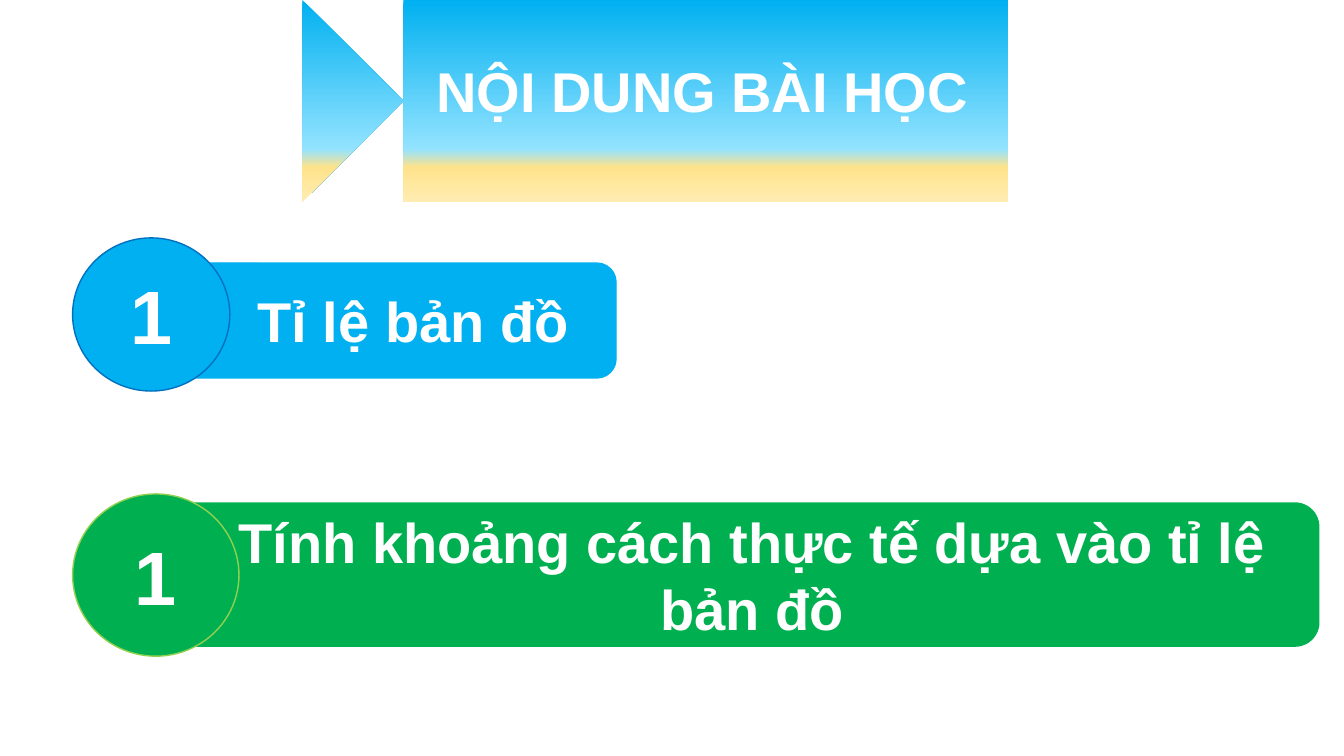
from dataclasses import dataclass

import pptx
import pptx.util
import pptx.dml.color
import pptx.enum.shapes
import pptx.enum.text
import pptx.oxml
import pptx.oxml.ns

Inches = pptx.util.Inches
MSO = pptx.enum.shapes.MSO_SHAPE
ALIGN = pptx.enum.text.PP_ALIGN
Box = tuple[float, float, float, float]


@dataclass
class Item:
    number: str
    text: str
    pill: Box
    circle: Box
    fill: str
    ring: str
    align: ALIGN
    indent: float


ITEMS = [
    Item("1", "Tỉ lệ bản đồ", (1.63, 2.61, 4.48, 1.14), (0.72, 2.36, 1.56, 1.52),
         "00B0F0", "0070C0", ALIGN.LEFT, 0.87),
    Item("1", "Tính khoảng cách thực tế dựa vào tỉ lệ bản đồ", (1.37, 4.99, 11.71, 1.42),
         (0.72, 4.9, 1.65, 1.61), "00B050", "92D050", ALIGN.CENTER, 0.56),
]

# Chevrons and the arrow of the title banner
BANNER = [
    [(3.16, 0.2), (3.44, 0.2), (3.72, 0.89), (3.44, 1.58), (3.16, 1.58), (3.44, 0.89)],
    [(3.63, 0.15), (3.89, 0.15), (3.89, 0.81), (3.9, 0.84), (3.89, 0.88), (3.89, 1.53),
     (3.63, 1.53), (3.89, 0.88), (3.89, 0.81)],
    [(3.9, 0.15), (9.67, 0.15), (10.17, 0.84), (9.67, 1.53), (3.9, 1.53), (4.18, 0.84)],
]
BANNER_STOPS = [(0, "00B0F0"), (74, "93E3FF"), (83, "FFE38C"), (100, "FFECB2")]


def rgb(value: str) -> pptx.dml.color.RGBColor:
    return pptx.dml.color.RGBColor.from_string(value)


def write(sp, text: str, size: float, align: ALIGN, left: float = 0.1) -> None:
    """Put white bold text in the middle of a shape."""
    tf = sp.text_frame
    frame = {"word_wrap": True, "auto_size": pptx.enum.text.MSO_AUTO_SIZE.NONE,
             "vertical_anchor": pptx.enum.text.MSO_ANCHOR.MIDDLE,
             "margin_left": Inches(left)}
    for name, value in frame.items():
        setattr(tf, name, value)
    p = tf.paragraphs[0]
    p.alignment = align
    r = p.add_run()
    r.text = text
    for name, value in {"name": "Arial", "size": pptx.util.Pt(size), "bold": True}.items():
        setattr(r.font, name, value)
    r.font.color.rgb = rgb("FFFFFF")


def add_filled(s, kind: MSO, box: Box, fill: str, line: str):
    sp = s.shapes.add_shape(kind, *map(Inches, box))
    sp.shadow.inherit = False
    sp.fill.solid()
    sp.fill.fore_color.rgb = rgb(fill)
    sp.line.color.rgb = rgb(line)
    sp.line.width = pptx.util.Pt(1)
    return sp


def add_banner(s):
    start, *rest = BANNER[0]
    fb = s.shapes.build_freeform(*start, scale=Inches(1))
    fb.add_line_segments(rest, close=True)
    for start, *rest in BANNER[1:]:
        fb.move_to(*start)
        fb.add_line_segments(rest, close=True)
    sp = fb.convert_to_shape()
    sp.shadow.inherit = False
    sp.line.fill.background()
    stops = "".join(f'<a:gs pos="{pos * 1000}"><a:srgbClr val="{color}"/></a:gs>'
                    for pos, color in BANNER_STOPS)
    grad = pptx.oxml.parse_xml(
        f'<a:gradFill {pptx.oxml.ns.nsdecls("a")} rotWithShape="1"><a:gsLst>{stops}</a:gsLst>'
        '<a:lin ang="5400000" scaled="0"/></a:gradFill>')
    sp._element.spPr.find(pptx.oxml.ns.qn("a:custGeom")).addnext(grad)
    return sp


def add_item(s, item: Item) -> None:
    pill = add_filled(s, MSO.ROUNDED_RECTANGLE, item.pill, item.fill, item.fill)
    write(pill, item.text, 40, item.align, item.indent)
    circle = add_filled(s, MSO.FLOWCHART_CONNECTOR, item.circle, item.fill, item.ring)
    write(circle, item.number, 54, ALIGN.CENTER)


def main() -> None:
    prs = pptx.Presentation()
    prs.slide_width, prs.slide_height = Inches(13.33), Inches(7.5)
    s = prs.slides.add_slide(prs.slide_layouts[5])

    # Title in front of its banner
    title = s.shapes.title
    place = {"left": 4.1, "top": 0.19, "width": 5.73, "height": 1.4}
    for name, value in place.items():
        setattr(title, name, Inches(value))
    write(title, "NỘI DUNG BÀI HỌC", 40, ALIGN.CENTER)
    title._element.addprevious(add_banner(s)._element)

    # Lesson items
    for item in ITEMS:
        add_item(s, item)

    prs.save("out.pptx")


if __name__ == "__main__":
    main()
